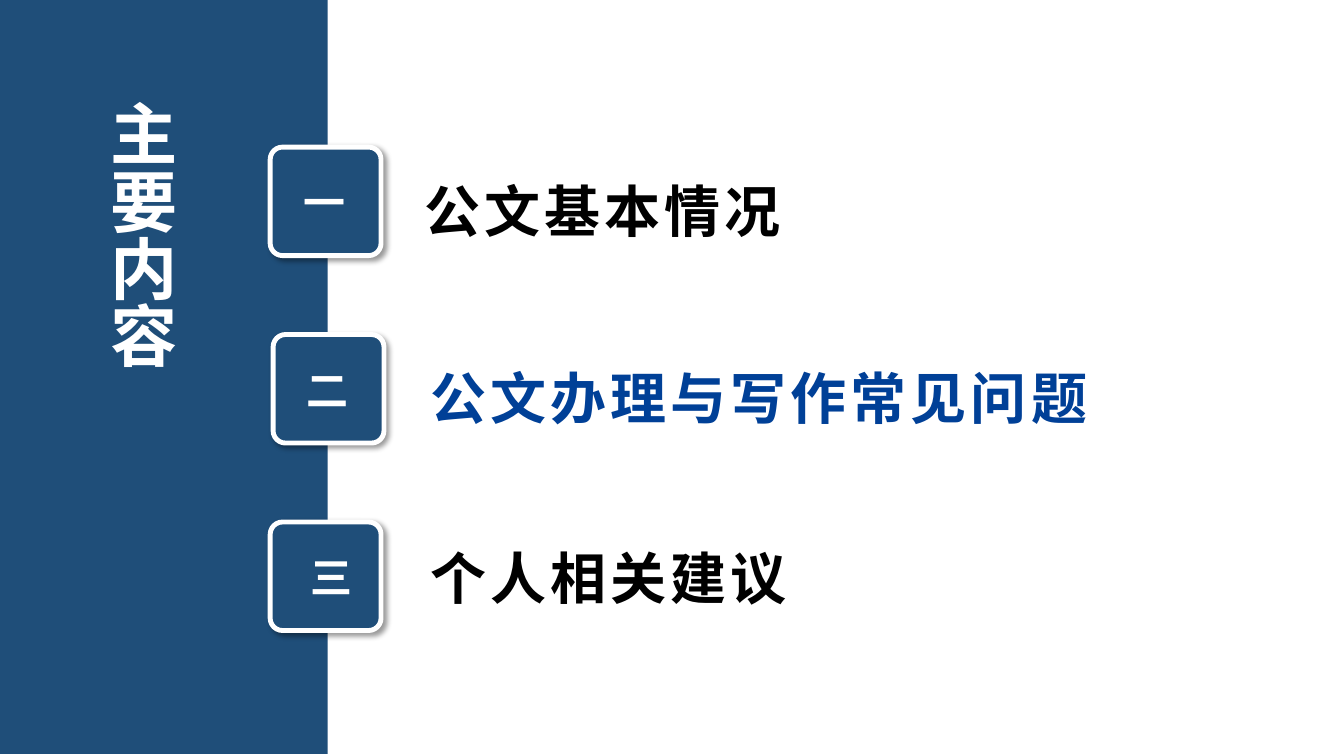
from lxml.etree import SubElement
from pptx import Presentation
from pptx.dml.color import RGBColor
from pptx.enum.shapes import MSO_SHAPE as Shape
from pptx.enum.text import MSO_ANCHOR as Anchor, MSO_AUTO_SIZE as AutoSize, PP_ALIGN as Align
from pptx.oxml import parse_xml
from pptx.oxml.ns import nsdecls, qn
from pptx.util import Pt

NAVY = RGBColor(0x1F, 0x4E, 0x79)
BLUE = RGBColor(0x00, 0x40, 0x97)
WHITE = RGBColor(0xFF, 0xFF, 0xFF)
BLACK = RGBColor(0x00, 0x00, 0x00)
LATIN, HAN = "Times New Roman", "Noto Sans CJK SC"

SHADOW = f"""<a:effectLst {nsdecls("a")}>
<a:outerShdw blurRad="{Pt(4)}" dist="{Pt(3)}" dir="2700000" algn="tl" rotWithShape="0">
<a:srgbClr val="000000"><a:alpha val="40000"/></a:srgbClr></a:outerShdw></a:effectLst>"""


class Agenda:
    """Draws the agenda elements on one slide in a shared style."""

    def __init__(self, deck):
        self.slide = deck.slides.add_slide(deck.slide_layouts[5])

    def set_text(self, box, text, size, color, name=LATIN, align=Align.LEFT, spacing=0):
        frame = box.text_frame
        settings = {"word_wrap": True, "auto_size": AutoSize.NONE, "vertical_anchor": Anchor.TOP}
        for key, value in settings.items():
            setattr(frame, key, value)
        line = frame.paragraphs[0]
        line.alignment = align
        run = line.add_run()
        run.text = text
        for key, value in {"name": name, "size": Pt(size), "bold": True}.items():
            setattr(run.font, key, value)
        run.font.color.rgb = color
        properties = run._r.get_or_add_rPr()
        SubElement(properties, qn("a:ea")).set("typeface", HAN)
        if spacing:
            properties.set("spc", str(spacing * 100))

    def panel(self, left, top, width, height):
        band = self.slide.shapes.add_shape(Shape.RECTANGLE, Pt(left), Pt(top), Pt(width), Pt(height))
        band.shadow.inherit = False
        band.fill.solid()
        band.fill.fore_color.rgb = NAVY
        band.line.fill.background()
        self.slide.shapes.title.element.addprevious(band.element)

    def title(self, text, left, top, width, height):
        heading = self.slide.shapes.title
        place = {"left": left, "top": top, "width": width, "height": height}
        for key, value in place.items():
            setattr(heading, key, Pt(value))
        self.set_text(heading, text, 48, WHITE, HAN, Align.JUSTIFY)
        heading.element.txBody.bodyPr.set("vert", "eaVert")

    def badge(self, numeral, left, top, numeral_left):
        group = self.slide.shapes.add_group_shape()
        tile = group.shapes.add_shape(Shape.ROUNDED_RECTANGLE, Pt(left), Pt(top), Pt(79.2), Pt(77.5))
        tile.adjustments[0] = 0.114
        tile.fill.solid()
        tile.fill.fore_color.rgb = NAVY
        tile.line.color.rgb = WHITE
        tile.line.width = Pt(3.5)
        tile.element.spPr.append(parse_xml(SHADOW))
        label = group.shapes.add_textbox(Pt(numeral_left), Pt(top + 17.5), Pt(85), Pt(44))
        self.set_text(label, numeral, 30, WHITE, align=Align.CENTER)

    def topic(self, text, left, top, width, color):
        label = self.slide.shapes.add_textbox(Pt(left), Pt(top), Pt(width), Pt(55.4))
        self.set_text(label, text, 40, color, spacing=3)


def main():
    deck = Presentation()
    deck.slide_width, deck.slide_height = Pt(960), Pt(540)
    agenda = Agenda(deck)
    agenda.panel(0, -1.4, 234, 540)
    agenda.title("主要内容", 64.8, 68.4, 72.7, 376.6)
    topics = [
        ("一", 193, 189.4, "公文基本情况", 296, 17.3, 610, BLACK),
        ("二", 195.1, 191.5, "公文办理与写作常见问题", 300.2, 17.3, 644, BLUE),
        ("三", 193, 194.4, "个人相关建议", 300.2, 11.5, 610, BLACK),
    ]
    for row, (numeral, left, numeral_left, text, text_left, drop, width, color) in enumerate(topics):
        top = 105.1 + 133.9 * row
        agenda.badge(numeral, left, top, numeral_left)
        agenda.topic(text, text_left, top + drop, width, color)
    deck.save("out.pptx")


if __name__ == "__main__":
    main()
